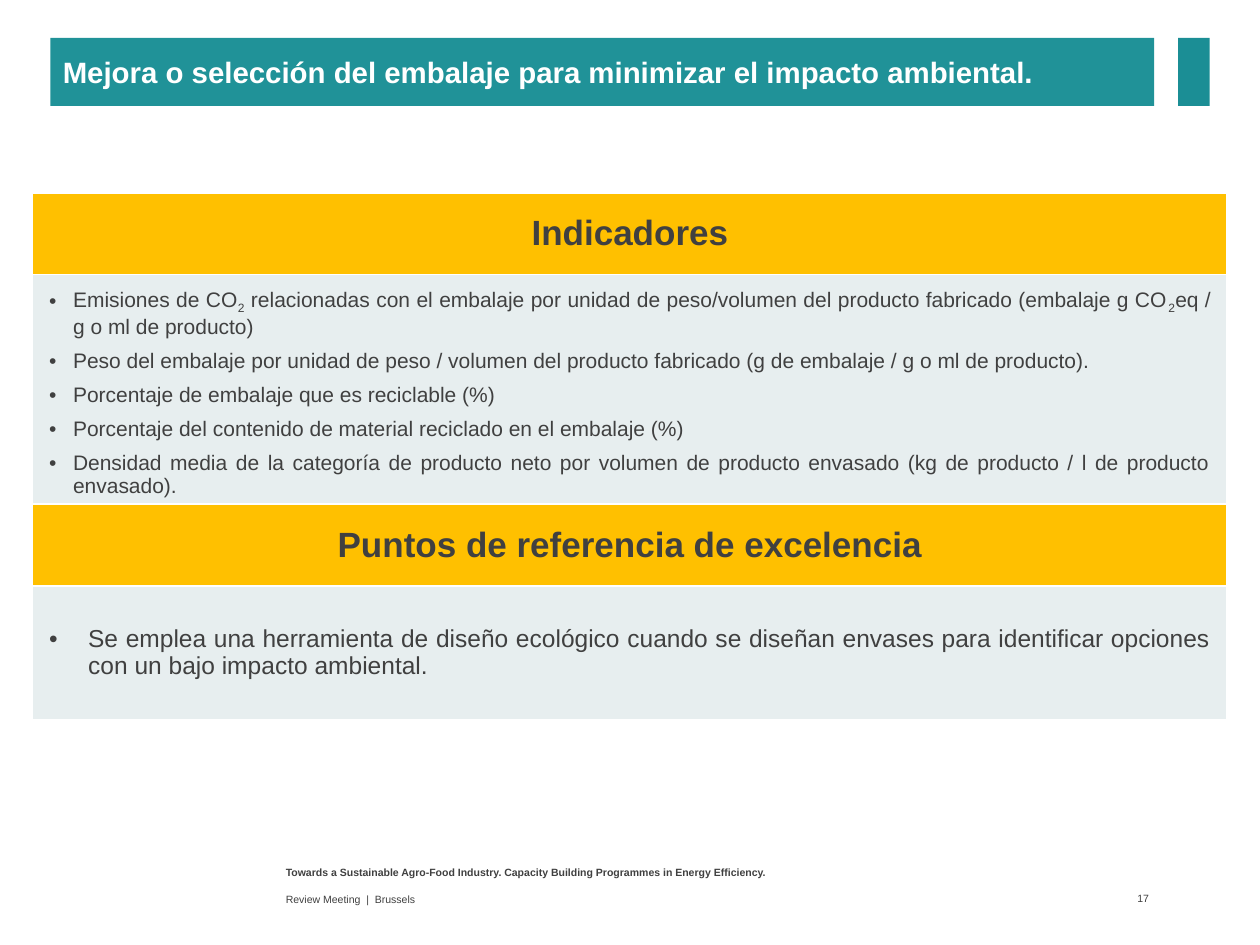
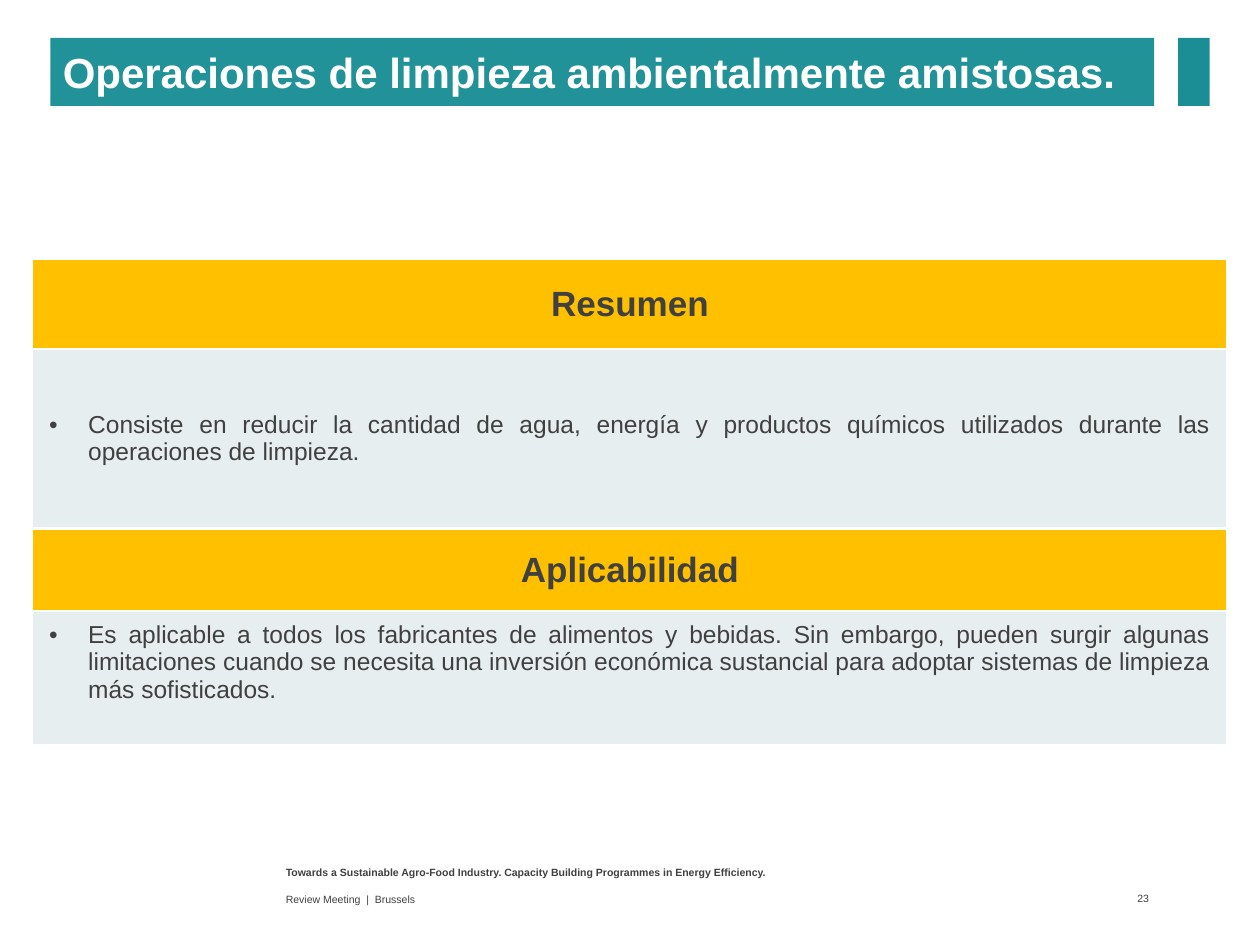
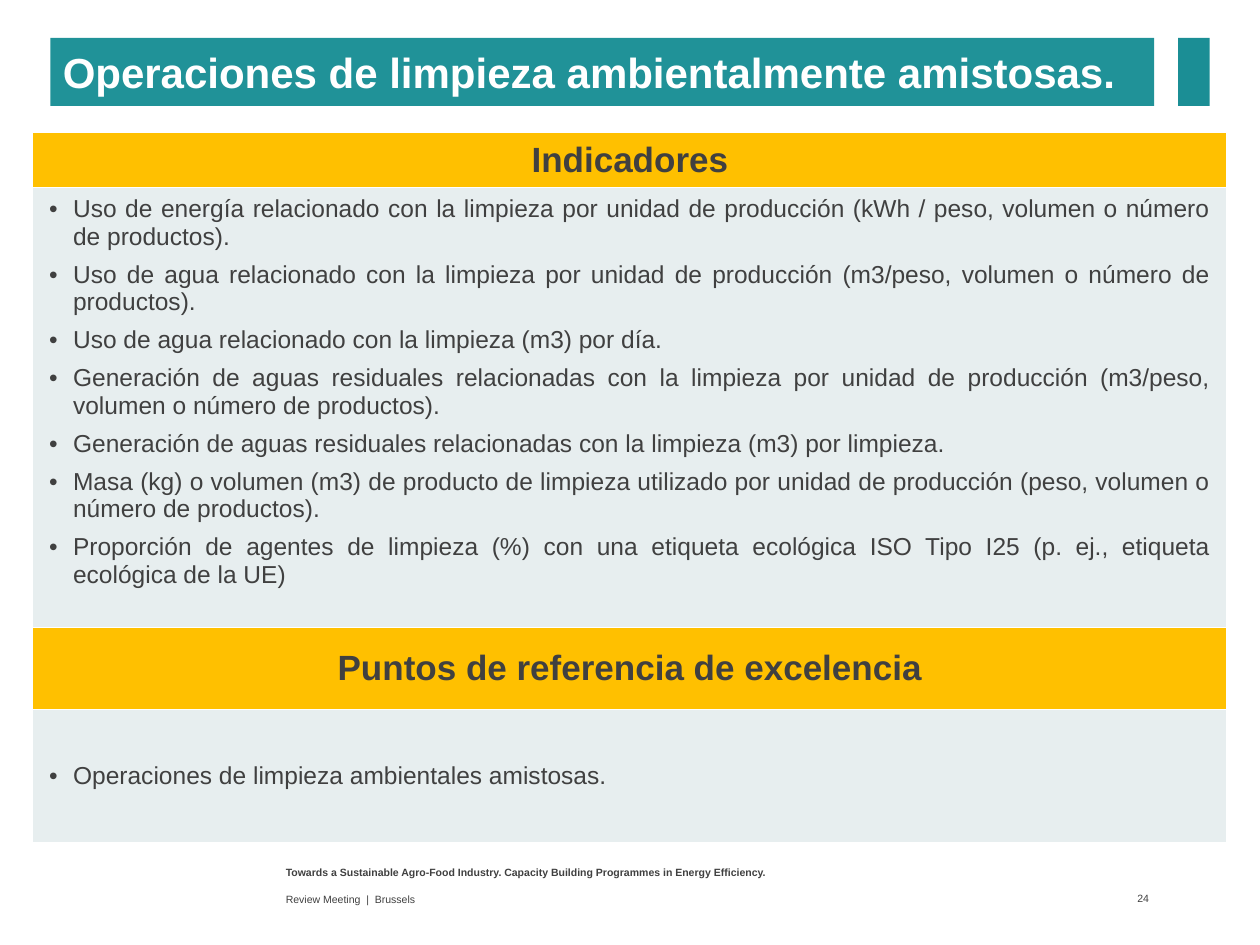
from dataclasses import dataclass

from lxml import etree
from pptx import Presentation
from pptx.dml.color import RGBColor
from pptx.enum import shapes, text
from pptx.oxml import ns
from pptx.util import Inches, Pt


@dataclass(frozen=True)
class Theme:
    font: str = "Arial"
    ink: str = "404040"
    white: str = "FFFFFF"
    title_band: str = "209298"
    accent: str = "1B8E95"
    heading_fill: str = "FFC000"
    body_fill: str = "E7EEEF"
    title_size: float = 24
    long_title_size: float = 16.8
    heading_size: float = 20
    body_size: float = 14
    small_body_size: float = 12
    footer_size: float = 6


T = Theme()
ALIGN = text.PP_ALIGN
ANCHOR = text.MSO_ANCHOR
PROGRAMME = ("Towards a Sustainable Agro-Food Industry. "
             "Capacity Building Programmes in Energy Efficiency.")
TABLE_LEFT, TABLE_WIDTH = 0.26, 9.48
NARROW, WIDE = 0.19, 0.31  # hanging indents of bullets


def rgb(value):
    return RGBColor.from_string(value)


def add_run(p, content, size, color=T.ink, bold=False):
    r = p.add_run()
    r.text = content
    r.font.name = T.font
    r.font.size = Pt(size)
    r.font.bold = bold
    r.font.color.rgb = rgb(color)
    return r


def set_margins(target, left, top, right, bottom):
    target.margin_left, target.margin_top = Inches(left), Inches(top)
    target.margin_right, target.margin_bottom = Inches(right), Inches(bottom)


def add_text(s, box, content, bold=False, align=ALIGN.LEFT,
             anchor=ANCHOR.MIDDLE, right=0.1):
    tf = s.shapes.add_textbox(*map(Inches, box)).text_frame
    tf.word_wrap = True
    tf.vertical_anchor = anchor
    set_margins(tf, 0.1, 0.05, right, 0.05)
    p = tf.paragraphs[0]
    p.alignment = align
    add_run(p, content, T.footer_size, bold=bold)


def add_band(s, left, width, fill):
    sp = s.shapes.add_shape(shapes.MSO_SHAPE.RECTANGLE, Inches(left),
                            Inches(0.3), Inches(width), Inches(0.54))
    sp.shadow.inherit = False
    sp.fill.solid()
    sp.fill.fore_color.rgb = rgb(fill)
    sp.line.fill.background()
    return sp


def add_title(s, title, size):
    tf = add_band(s, 0.4, 8.76, T.title_band).text_frame
    tf.word_wrap = True
    tf.vertical_anchor = ANCHOR.MIDDLE
    p = tf.paragraphs[0]
    p.alignment = ALIGN.LEFT
    add_run(p, title, size, T.white, bold=True)
    add_band(s, 9.35, 0.25, T.accent)


def add_footer(s, number):
    add_text(s, (2.17, 6.82, 5.5, 0.21), PROGRAMME, bold=True,
             anchor=ANCHOR.TOP)
    # Non-breaking spaces are not needed: the double gaps belong to the text.
    add_text(s, (2.17, 7.04, 5.5, 0.19), "Review Meeting  |  Brussels")
    add_text(s, (8.6, 7.03, 0.56, 0.2), str(number), align=ALIGN.RIGHT,
             right=0.04)


def style_cell(cell, fill, anchor=ANCHOR.MIDDLE):
    """Give a cell white borders, a fill and an anchor."""
    tc_pr = cell._tc.get_or_add_tcPr()
    for side in ("lnL", "lnR", "lnT", "lnB"):
        ln = etree.SubElement(tc_pr, ns.qn(f"a:{side}"), w=str(Pt(1)))
        solid = etree.SubElement(ln, ns.qn("a:solidFill"))
        etree.SubElement(solid, ns.qn("a:srgbClr"), val=T.white)
    cell.fill.solid()
    cell.fill.fore_color.rgb = rgb(fill)
    cell.vertical_anchor = anchor


def add_bullet(p, content, size, indent, space_after):
    """Write one bullet; text between bars is set as a subscript."""
    p_pr = p._p.get_or_add_pPr()
    p_pr.set("marL", str(Inches(indent)))
    p_pr.set("indent", str(-Inches(indent)))
    etree.SubElement(p_pr, ns.qn("a:buFont"), typeface=T.font)
    etree.SubElement(p_pr, ns.qn("a:buChar"), char="•")
    p.alignment = ALIGN.JUSTIFY
    p.space_after = Pt(space_after)
    for i, part in enumerate(content.split("|")):
        r = add_run(p, part, size)
        if i % 2:
            r._r.get_or_add_rPr().set("baseline", "-25000")


def add_panel(s, top, heights, heading, bullets, size=T.body_size,
              indent=NARROW, space_after=6, anchor=ANCHOR.MIDDLE,
              body_top=0.06):
    """Add a table with a heading row above a row of bullets."""
    table = s.shapes.add_table(2, 1, Inches(TABLE_LEFT), Inches(top),
                               Inches(TABLE_WIDTH),
                               Inches(sum(heights))).table
    table.first_row = table.horz_banding = False
    for row, height in zip(table.rows, heights):
        row.height = Inches(height)

    head, body = table.cell(0, 0), table.cell(1, 0)
    style_cell(head, T.heading_fill)
    set_margins(head, 0.1, 0.05, 0.1, 0.05)
    p = head.text_frame.paragraphs[0]
    p.alignment = ALIGN.CENTER
    add_run(p, heading, T.heading_size, bold=True)

    style_cell(body, T.body_fill, anchor)
    set_margins(body, 0.13, body_top, 0.13, 0.06)
    tf = body.text_frame
    for i, bullet in enumerate(bullets):
        p = tf.add_paragraph() if i else tf.paragraphs[0]
        add_bullet(p, bullet, size, indent, space_after)


def add_slide(prs, number, title, title_size=T.title_size):
    s = prs.slides.add_slide(prs.slide_layouts[6])
    add_footer(s, number)
    add_title(s, title, title_size)
    return s


def main():
    prs = Presentation()
    prs.slide_width, prs.slide_height = Inches(10), Inches(7.5)
    cleaning = "Operaciones de limpieza ambientalmente amistosas."
    benchmarks = "Puntos de referencia de excelencia"
    usual_rows = (0.65, 1.06)

    s = add_slide(prs, 17, "Mejora o selección del embalaje para minimizar "
                  "el impacto ambiental.", T.long_title_size)
    add_panel(s, 1.53, (0.65, 1.78), "Indicadores", [
        "Emisiones de CO|2| relacionadas con el embalaje por unidad de "
        "peso/volumen del producto fabricado (embalaje g CO|2|eq / g o ml "
        "de producto)",
        "Peso del embalaje por unidad de peso / volumen del producto "
        "fabricado (g de embalaje / g o ml de producto).",
        "Porcentaje de embalaje que es reciclable (%)",
        "Porcentaje del contenido de material reciclado en el embalaje (%)",
        "Densidad media de la categoría de producto neto por volumen de "
        "producto envasado (kg de producto / l de producto envasado).",
    ], size=T.small_body_size)
    add_panel(s, 4, usual_rows, benchmarks, [
        "Se emplea una herramienta de diseño ecológico cuando se diseñan "
        "envases para identificar opciones con un bajo impacto ambiental.",
    ], indent=WIDE, space_after=0)

    s = add_slide(prs, 23, cleaning)
    add_panel(s, 2.06, (0.71, 1.42), "Resumen", [
        "Consiste en reducir la cantidad de agua, energía y productos "
        "químicos utilizados durante las operaciones de limpieza.",
    ], indent=WIDE, space_after=0)
    add_panel(s, 4.2, usual_rows, "Aplicabilidad", [
        "Es aplicable a todos los fabricantes de alimentos y bebidas. Sin "
        "embargo, pueden surgir algunas limitaciones cuando se necesita una "
        "inversión económica sustancial para adoptar sistemas de limpieza "
        "más sofisticados.",
    ], indent=WIDE, space_after=0, anchor=ANCHOR.TOP, body_top=0.08)

    s = add_slide(prs, 24, cleaning)
    add_panel(s, 1.05, (0.44, 3.49), "Indicadores", [
        "Uso de energía relacionado con la limpieza por unidad de producción "
        "(kWh / peso, volumen o número de productos).",
        "Uso de agua relacionado con la limpieza por unidad de producción "
        "(m3/peso, volumen o número de productos).",
        "Uso de agua relacionado con la limpieza (m3) por día.",
        "Generación de aguas residuales relacionadas con la limpieza por "
        "unidad de producción (m3/peso, volumen o número de productos).",
        "Generación de aguas residuales relacionadas con la limpieza (m3) "
        "por limpieza.",
        "Masa (kg) o volumen (m3) de producto de limpieza utilizado por "
        "unidad de producción (peso, volumen o número de productos).",
        "Proporción de agentes de limpieza (%) con una etiqueta ecológica "
        "ISO Tipo I25 (p. ej., etiqueta ecológica de la UE)",
    ], anchor=ANCHOR.TOP)
    add_panel(s, 4.98, usual_rows, benchmarks, [
        "Operaciones de limpieza ambientales amistosas.",
    ])

    prs.save("out.pptx")


if __name__ == "__main__":
    main()
